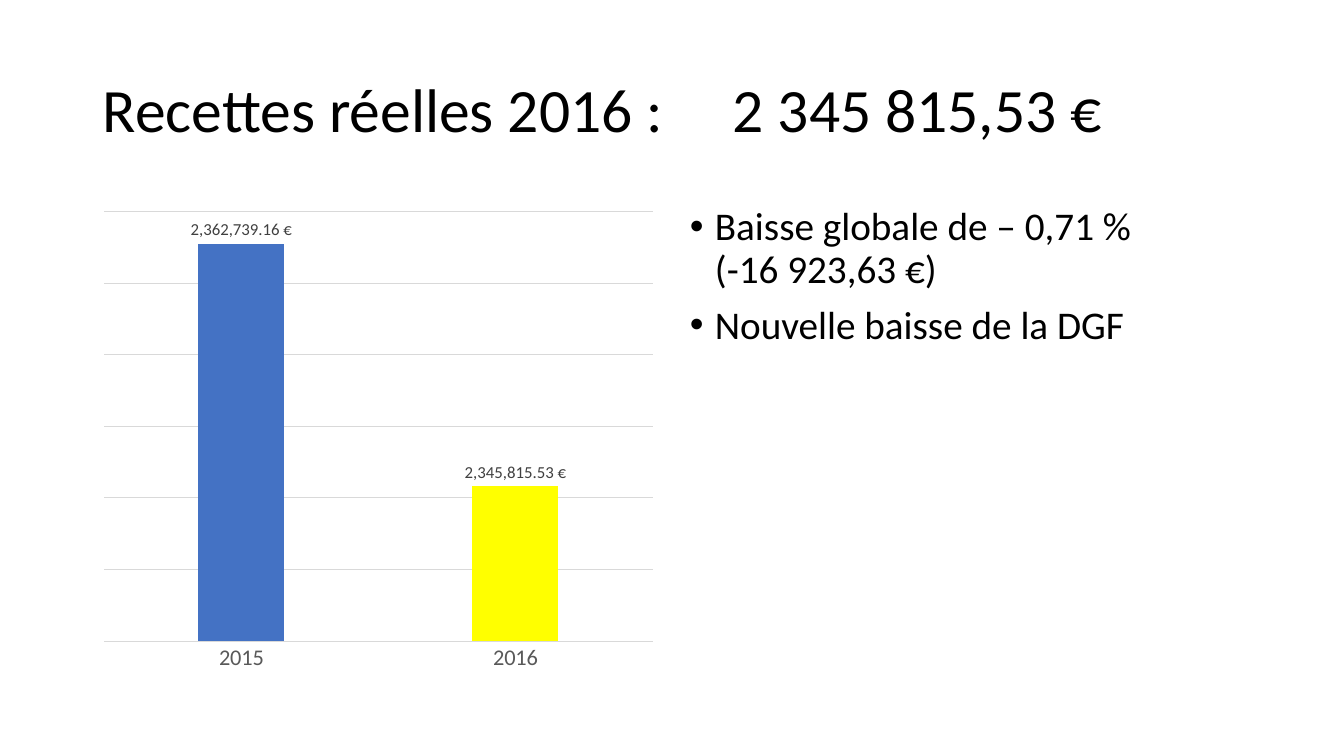
"""Builds the slide on actual 2016 revenue: title, column chart and key points."""
from lxml.etree import SubElement
from pptx import Presentation
from pptx.chart.data import CategoryChartData
from pptx.dml.color import RGBColor
from pptx.enum.chart import XL_CHART_TYPE, XL_LABEL_POSITION, XL_TICK_LABEL_POSITION, XL_TICK_MARK
from pptx.enum.text import MSO_ANCHOR
from pptx.oxml.ns import qn
from pptx.util import Emu, Pt

TITLE = "Recettes réelles 2016 :\t2 345 815,53 €"
POINTS = ["Baisse globale de – 0,71 %\v(-16 923,63 €)", "Nouvelle baisse de la DGF"]
REVENUE = {"2015": 2362739.16, "2016": 2345815.53}
AXIS_MIN, AXIS_MAX, AXIS_STEP = 2335000, 2365000, 5000
EURO_FORMAT = '#,##0.00\\ "€"'

FONT = "Calibri"
COLORS = {"text": "000000", "label": "404040", "axis": "595959", "grid": "D9D9D9",
          "2015": "4472C4", "2016": "FFFF00"}

SLIDE_W, SLIDE_H = 1344, 756
MARGIN, GAP = 93, 16
TITLE_TOP, TITLE_H = 40, 146
BODY_TOP, BODY_H = 202, 480
CONTENT_W = SLIDE_W - 2 * MARGIN
COLUMN_W = (CONTENT_W - GAP) // 2
AMOUNT_TAB = 630
BULLET_INDENT = 25


def px(length):
    return Emu(round(length * 914400 / 100.8))


def color(name):
    return RGBColor.from_string(COLORS[name])


def style(font, size, name):
    font.name, font.size = FONT, Pt(size)
    font.color.rgb = color(name)


def hairline(line):
    line.width = Pt(0.75)
    line.color.rgb = color("grid")


def add_text(slide, box, paragraphs, size, anchor):
    frame = slide.shapes.add_textbox(*map(px, box)).text_frame
    frame.word_wrap = True
    frame.vertical_anchor = anchor
    frame.text = "\n".join(paragraphs)
    for paragraph in frame.paragraphs:
        paragraph.line_spacing = 0.9
        style(paragraph.font, size, "text")
    return frame


def add_title(slide):
    box = (MARGIN, TITLE_TOP, CONTENT_W, TITLE_H)
    frame = add_text(slide, box, [TITLE], 44, MSO_ANCHOR.MIDDLE)
    properties = frame.paragraphs[0]._p.get_or_add_pPr()
    stops = SubElement(properties, qn("a:tabLst"))
    SubElement(stops, qn("a:tab"), pos=str(px(AMOUNT_TAB)), algn="l")
    properties.find(qn("a:defRPr")).addprevious(stops)


def add_points(slide):
    box = (MARGIN + COLUMN_W + GAP, BODY_TOP, COLUMN_W, BODY_H)
    frame = add_text(slide, box, POINTS, 28, MSO_ANCHOR.TOP)
    for paragraph in frame.paragraphs:
        paragraph.space_before = Pt(10)
        properties = paragraph._p.get_or_add_pPr()
        properties.set("marL", str(px(BULLET_INDENT)))
        properties.set("indent", str(px(-BULLET_INDENT)))
        defaults = properties.find(qn("a:defRPr"))
        bullet_font = SubElement(properties, qn("a:buFont"), typeface="Arial")
        bullet = SubElement(properties, qn("a:buChar"), char="•")
        defaults.addprevious(bullet_font)
        defaults.addprevious(bullet)


def add_revenue_chart(slide):
    data = CategoryChartData(number_format=EURO_FORMAT)
    data.categories = list(REVENUE)
    data.add_series("Recettes réelles", list(REVENUE.values()))
    box = map(px, (MARGIN, BODY_TOP, COLUMN_W, BODY_H))
    chart = slide.shapes.add_chart(XL_CHART_TYPE.COLUMN_CLUSTERED, *box, data).chart
    chart.has_legend = chart.has_title = False
    style(chart.font, 10, "text")

    years = chart.category_axis
    years.major_tick_mark = years.minor_tick_mark = XL_TICK_MARK.NONE
    style(years.tick_labels.font, 16, "axis")
    hairline(years.format.line)

    amounts = chart.value_axis
    amounts.minimum_scale, amounts.maximum_scale = AXIS_MIN, AXIS_MAX
    amounts.major_unit = AXIS_STEP
    amounts.tick_label_position = XL_TICK_LABEL_POSITION.NONE
    amounts.visible = False
    hairline(amounts.major_gridlines.format.line)

    plot = chart.plots[0]
    plot.gap_width, plot.overlap = 219, -27
    plot.vary_by_categories = False
    plot.has_data_labels = True
    labels = plot.data_labels
    labels.show_value = True
    labels.number_format, labels.number_format_is_linked = EURO_FORMAT, False
    labels.position = XL_LABEL_POSITION.OUTSIDE_END
    style(labels.font, 12, "label")
    for index, year in enumerate(REVENUE):
        fill = plot.series[0].points[index].format.fill
        fill.solid()
        fill.fore_color.rgb = color(year)


def main():
    deck = Presentation()
    deck.slide_width, deck.slide_height = px(SLIDE_W), px(SLIDE_H)
    slide = deck.slides.add_slide(deck.slide_layouts[6])
    add_title(slide)
    add_points(slide)
    add_revenue_chart(slide)
    deck.save("out.pptx")


if __name__ == "__main__":
    main()
